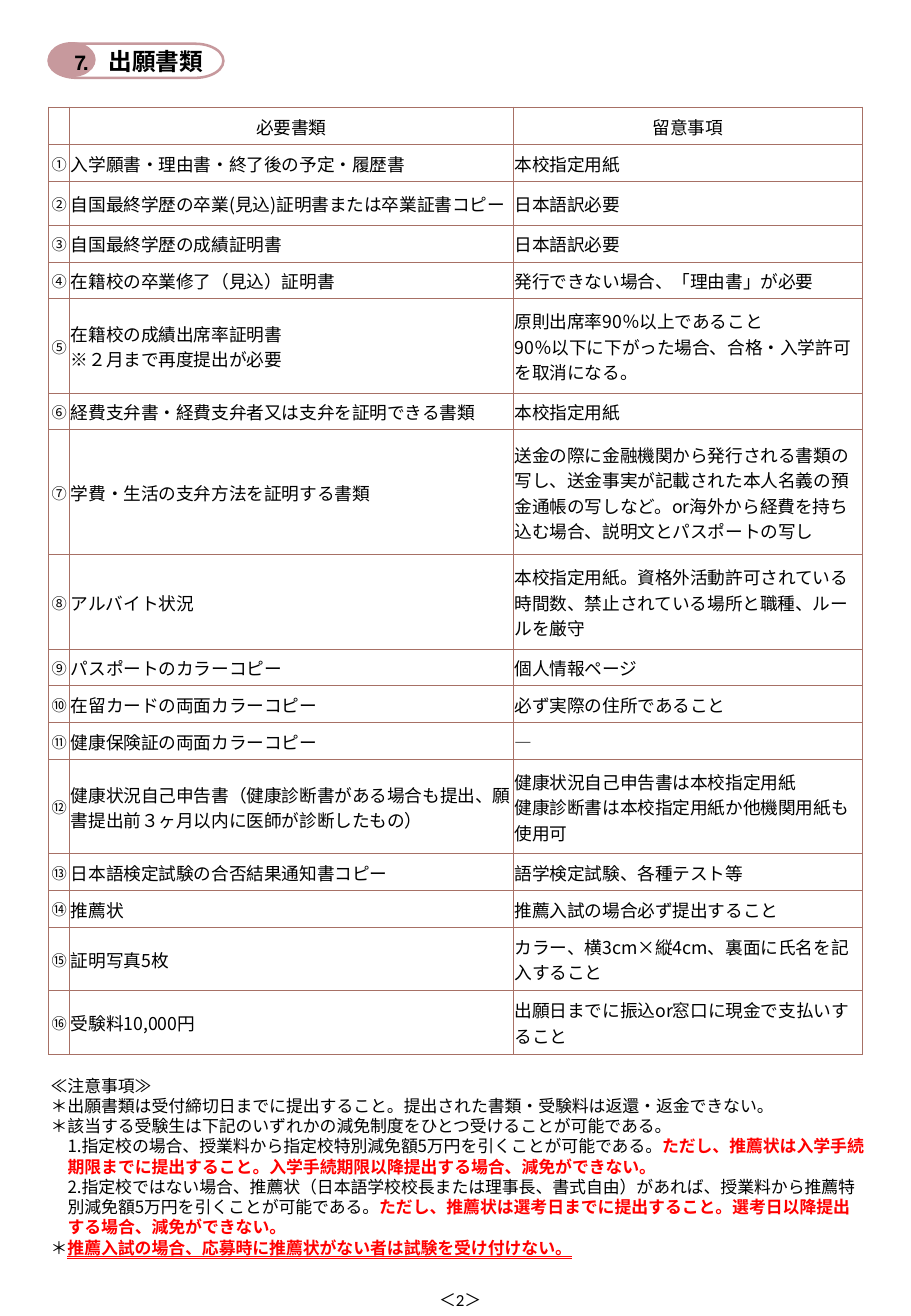
from dataclasses import dataclass

from lxml import etree
from pptx import Presentation
from pptx.dml.color import RGBColor
from pptx.enum import shapes, text
from pptx.oxml import ns
from pptx.util import Pt


@dataclass(frozen=True)
class Theme:
    ink: str = "000000"
    red: str = "FF0000"
    rose: str = "C7999D"
    rule: str = "A77065"
    kanji: str = "Noto Sans CJK JP"
    latin: str = "Calibri"
    mark: float = 9
    note: float = 10
    cell: float = 10.5
    title: float = 14
    number: float = 16


THEME = Theme()
LEFT, CENTER, RIGHT = text.PP_ALIGN.LEFT, text.PP_ALIGN.CENTER, text.PP_ALIGN.RIGHT

WIDTHS = (12.5, 263, 207)
HEIGHTS = {1: 21.75, 2: 37.6, 3: 56, 4: 74}  # by lines of text
MARKS = "①②③④⑤⑥⑦⑧⑨⑩⑪⑫⑬⑭⑮⑯"
PAPERS = [  # lines, document, remark
    (1, "入学願書・理由書・終了後の予定・履歴書", "本校指定用紙"),
    (1, "自国最終学歴の卒業(見込)証明書または卒業証書コピー", "日本語訳必要"),
    (1, "自国最終学歴の成績証明書", "日本語訳必要"),
    (1, "在籍校の卒業修了（見込）証明書", "発行できない場合、「理由書」が必要"),
    (3, "在籍校の成績出席率証明書\n※２月まで再度提出が必要",
     "原則出席率90％以上であること\n90％以下に下がった場合、合格・入学許可を取消になる。"),
    (1, "経費支弁書・経費支弁者又は支弁を証明できる書類", "本校指定用紙"),
    (4, "学費・生活の支弁方法を証明する書類",
     "送金の際に金融機関から発行される書類の写し、送金事実が記載された本人名義の"
     "預金通帳の写しなど。or海外から経費を持ち込む場合、説明文とパスポートの写し"),
    (3, "アルバイト状況",
     "本校指定用紙。資格外活動許可されている時間数、禁止されている場所と職種、ルールを厳守"),
    (1, "パスポートのカラーコピー", "個人情報ページ"),
    (1, "在留カードの両面カラーコピー", "必ず実際の住所であること"),
    (1, "健康保険証の両面カラーコピー", "―"),
    (3, "健康状況自己申告書（健康診断書がある場合も提出、願書提出前３ヶ月以内に医師が診断したもの）",
     "健康状況自己申告書は本校指定用紙\n健康診断書は本校指定用紙か他機関用紙も使用可"),
    (1, "日本語検定試験の合否結果通知書コピー", "語学検定試験、各種テスト等"),
    (1, "推薦状", "推薦入試の場合必ず提出すること"),
    (2, "証明写真5枚", "カラー、横3cm×縦4cm、裏面に氏名を記入すること"),
    (2, "受験料10,000円", "出願日までに振込or窓口に現金で支払いすること"),
]
NOTES = [  # first-line indent, plain part, red part
    (0, "≪注意事項≫", ""),
    (0, "＊出願書類は受付締切日までに提出すること。提出された書類・受験料は返還・返金できない。", ""),
    (0, "＊該当する受験生は下記のいずれかの減免制度をひとつ受けることが可能である。", ""),
    (10, "1.指定校の場合、授業料から指定校特別減免額5万円を引くことが可能である。",
     "ただし、推薦状は入学手続"),
    (10, "", "期限までに提出すること。入学手続期限以降提出する場合、減免ができない。"),
    (10, "2.指定校ではない場合、推薦状（日本語学校校長または理事長、書式自由）があれば、"
     "授業料から推薦特", ""),
    (10, "別減免額5万円を引くことが可能である。",
     "ただし、推薦状は選考日までに提出すること。選考日以降提出"),
    (10, "", "する場合、減免ができない。"),
    (0, "＊", "推薦入試の場合、応募時に推薦状がない者は試験を受け付けない。"),
]


def color(code):
    return RGBColor.from_string(code)


def style(run, size, face=THEME.kanji, code=THEME.ink, bold=False):
    font = run.font
    font.size, font.name, font.bold = Pt(size), face, bold
    font.color.rgb = color(code)
    east = etree.SubElement(run._r.get_or_add_rPr(), ns.qn("a:ea"))
    east.set("typeface", THEME.kanji)


def write(frame, words, size, align=LEFT, **look):
    frame.text = words
    for para in frame.paragraphs:
        para.alignment = align
        for run in para.runs or [para.add_run()]:
            style(run, size, **look)


def add_box(slide, left, top, width, height):
    frame = slide.shapes.add_textbox(Pt(left), Pt(top), Pt(width), Pt(height)).text_frame
    frame.word_wrap = True
    return frame


def add_badge(slide, kind, area, line, fill, words, size, align):
    badge = slide.shapes.add_shape(kind, *map(Pt, area))
    badge.shadow.inherit = False
    badge.line.color.rgb = color(THEME.rose)
    badge.line.width = Pt(line)
    if fill:
        badge.fill.solid()
        badge.fill.fore_color.rgb = color(fill)
    else:
        badge.fill.background()
    badge.text_frame.vertical_anchor = text.MSO_ANCHOR.MIDDLE
    write(badge.text_frame, words, size, align, face=THEME.latin, bold=True)


def add_rules(cell):
    """Draw a thin line on all four sides of a cell."""
    props = cell._tc.get_or_add_tcPr()
    for side in ("lnL", "lnR", "lnT", "lnB"):
        line = etree.SubElement(props, ns.qn(f"a:{side}"), w=str(Pt(0.5)))
        fill = etree.SubElement(line, ns.qn("a:solidFill"))
        etree.SubElement(fill, ns.qn("a:srgbClr"), val=THEME.rule)


def fill_cell(cell, words, size, align):
    cell.margin_left = cell.margin_right = cell.margin_top = Pt(0.75)
    cell.margin_bottom = 0
    cell.vertical_anchor = text.MSO_ANCHOR.MIDDLE
    add_rules(cell)
    cell.fill.background()
    write(cell.text_frame, words, size, align)


def add_papers(slide):
    lines = [1] + [paper[0] for paper in PAPERS]
    rows = [("", "必要書類", "留意事項")]
    rows += [(mark, name, remark) for mark, (_, name, remark) in zip(MARKS, PAPERS)]
    tall = sum(HEIGHTS[count] for count in lines)
    table = slide.shapes.add_table(len(rows), len(WIDTHS), Pt(28.8), Pt(63.4),
                                   Pt(sum(WIDTHS)), Pt(tall)).table
    table.first_row = table.horz_banding = False
    for column, width in zip(table.columns, WIDTHS):
        column.width = Pt(width)
    for r, (count, row) in enumerate(zip(lines, rows)):
        table.rows[r].height = Pt(HEIGHTS[count])
        for c, words in enumerate(row):
            size = THEME.cell if c else THEME.mark
            align = CENTER if r == 0 or c == 0 else LEFT
            fill_cell(table.cell(r, c), words, size, align)


def add_notes(slide):
    frame = add_box(slide, 23, 633.6, 501, 116.6)
    frame.text = "\n".join(plain for _, plain, _ in NOTES)
    for para, (indent, _, alert) in zip(frame.paragraphs, NOTES):
        para.line_spacing = Pt(12)
        para._p.get_or_add_pPr().set("indent", str(Pt(indent)))
        for run in para.runs:
            style(run, THEME.note)
        if alert:
            run = para.add_run()
            run.text = alert
            style(run, THEME.note, code=THEME.red, bold=True)
    run.font.underline = text.MSO_UNDERLINE.DOUBLE_LINE


def main():
    deck = Presentation()
    deck.slide_width, deck.slide_height = Pt(540), Pt(779.76)
    slide = deck.slides.add_slide(deck.slide_layouts[6])
    add_notes(slide)
    write(add_box(slide, 30.2, 760.3, 485.3, 19.4), "＜2＞", THEME.note, CENTER,
          face=THEME.latin)
    kinds = shapes.MSO_SHAPE
    add_badge(slide, kinds.FLOWCHART_TERMINATOR, (28.8, 25.9, 103.7, 20.2), 1.5, None,
              "出願書類", THEME.title, RIGHT)
    add_badge(slide, kinds.OVAL, (28.8, 25.4, 27.4, 19.8), 1, THEME.rose,
              "⒎", THEME.number, CENTER)
    add_papers(slide)
    deck.save("out.pptx")


if __name__ == "__main__":
    main()
